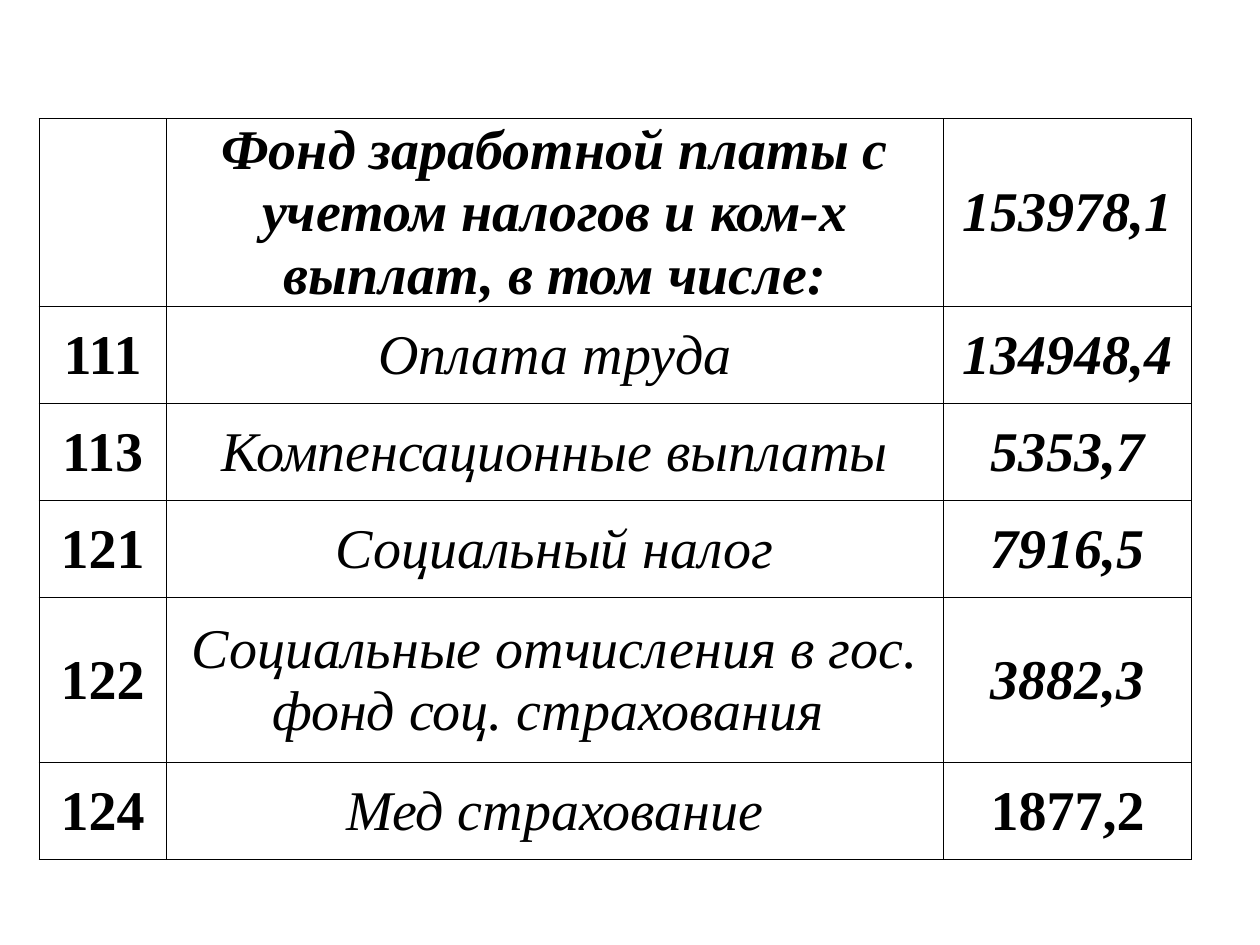
from typing import NamedTuple

from lxml import etree
from pptx import Presentation
from pptx import util as u
from pptx.dml.color import RGBColor
from pptx.enum import text
from pptx.oxml import ns

FONT = "Times New Roman"
BLACK = "000000"
WHITE = "FFFFFF"
COLUMN_WIDTHS = (1.01, 6.17, 1.97)


class BudgetRow(NamedTuple):
    code: str
    label: str
    amount: str
    height: float = 0.77
    label_bold: bool = False
    amount_italic: bool = True
    amount_fill: str | None = None


ROWS = (
    BudgetRow("", "Фонд заработной платы с учетом налогов и ком-х выплат, в том числе:",
              "153978,1", height=1.39, label_bold=True, amount_fill=WHITE),
    BudgetRow("111", "Оплата труда", "134948,4"),
    BudgetRow("113", "Компенсационные выплаты", "5353,7", amount_fill=WHITE),
    BudgetRow("121", "Социальный налог", "7916,5"),
    BudgetRow("122", "Социальные отчисления в гос. фонд соц. страхования ",
              "3882,3", height=1.31),
    BudgetRow("124", "Мед страхование", "1877,2", amount_italic=False),
)


def color(value: str) -> RGBColor:
    return RGBColor.from_string(value)


def set_borders(cell, line_color: str = BLACK, width: float = 0.5) -> None:
    properties = cell._tc.get_or_add_tcPr()
    for index, side in enumerate(("a:lnL", "a:lnR", "a:lnT", "a:lnB")):
        line = etree.Element(ns.qn(side), w=str(u.Pt(width)))
        fill = etree.SubElement(line, ns.qn("a:solidFill"))
        etree.SubElement(fill, ns.qn("a:srgbClr"), val=line_color)
        properties.insert(index, line)


def write_cell(cell, content: str, *, bold: bool = False, italic: bool = False,
               fill: str | None = None) -> None:
    if fill:
        cell.fill.solid()
        cell.fill.fore_color.rgb = color(fill)
    else:
        cell.fill.background()
    set_borders(cell)
    cell.vertical_anchor = text.MSO_ANCHOR.MIDDLE
    cell.margin_left = cell.margin_right = cell.margin_top = u.Inches(0.01)
    cell.margin_bottom = u.Inches(0)
    if not content:
        return
    paragraph = cell.text_frame.paragraphs[0]
    paragraph.alignment = text.PP_ALIGN.CENTER
    run = paragraph.add_run()
    run.text = content
    run.font.name = FONT
    run.font.size = u.Pt(32)
    run.font.bold = bold
    run.font.italic = italic
    run.font.color.rgb = color(BLACK)


def add_budget_table(slide, rows: tuple[BudgetRow, ...]) -> None:
    frame = slide.shapes.add_table(
        len(rows), len(COLUMN_WIDTHS), u.Inches(0.31), u.Inches(0.94),
        u.Inches(sum(COLUMN_WIDTHS)), u.Inches(sum(row.height for row in rows)))
    table = frame.table
    table.first_row = table.horz_banding = False
    for column, width in zip(table.columns, COLUMN_WIDTHS):
        column.width = u.Inches(width)
    for index, row in enumerate(rows):
        table.rows[index].height = u.Inches(row.height)
        write_cell(table.cell(index, 0), row.code, bold=True)
        write_cell(table.cell(index, 1), row.label, bold=row.label_bold,
                   italic=True, fill=WHITE)
        write_cell(table.cell(index, 2), row.amount, bold=True,
                   italic=row.amount_italic, fill=row.amount_fill)


def main() -> None:
    presentation = Presentation()
    presentation.slide_width = u.Inches(10)
    presentation.slide_height = u.Inches(7.5)
    slide = presentation.slides.add_slide(presentation.slide_layouts[6])
    add_budget_table(slide, ROWS)
    presentation.save("out.pptx")


if __name__ == "__main__":
    main()
